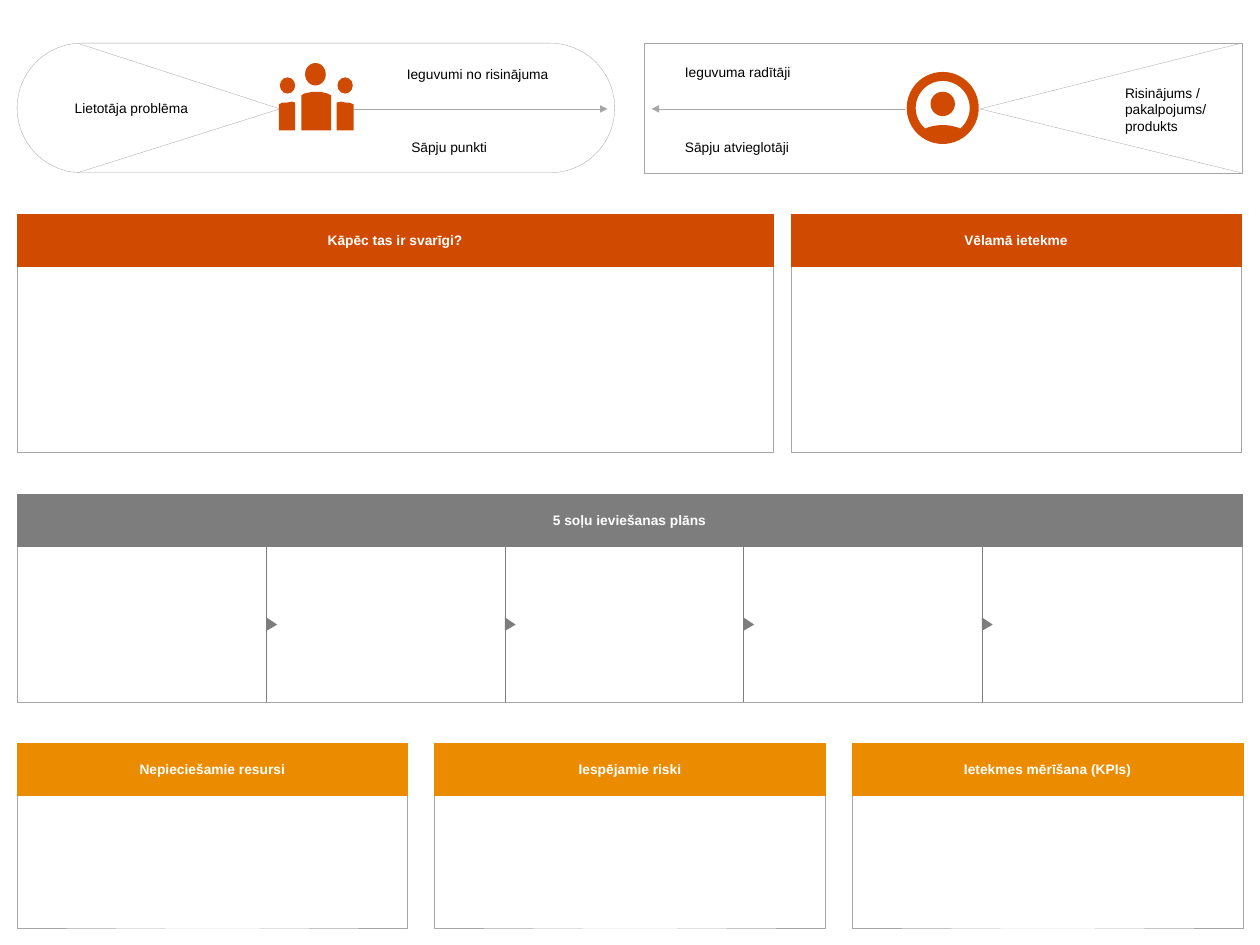
import dataclasses
import math
import typing

import pptx
import pptx.dml.color
import pptx.enum.shapes
import pptx.enum.text
import pptx.oxml
import pptx.oxml.ns
import pptx.util

Inches = pptx.util.Inches
RGB = pptx.dml.color.RGBColor
SHAPES = pptx.enum.shapes.MSO_SHAPE
Point = tuple[float, float]


@dataclasses.dataclass(frozen=True)
class Theme:
    orange: RGB = RGB.from_string("D04A02")
    amber: RGB = RGB.from_string("EB8C00")
    gray: RGB = RGB.from_string("7D7D7D")
    outline: RGB = RGB.from_string("A6A6A6")
    black: RGB = RGB.from_string("000000")
    white: RGB = RGB.from_string("FFFFFF")
    font: str = "Arial"
    text_size: float = 11
    line_width: float = 0.25


class Box(typing.NamedTuple):
    left: float
    top: float
    width: float
    height: float


class Panel(typing.NamedTuple):
    title: str
    color: RGB
    header: Box
    bottom: float


class Label(typing.NamedTuple):
    text: str
    box: Box


THEME = Theme()
LEFT = 0.19
HEADER_HEIGHT = 0.58
CANVAS_TOP, CANVAS_HEIGHT, CANVAS_MIDDLE = 0.48, 1.44, 1.21
CANVAS_BOTTOM = CANVAS_TOP + CANVAS_HEIGHT
RESOURCE_PITCH = 4.64
PLAN_TOP, PLAN_BOTTOM = 5.49, 7.8
STEP_LEFT, STEP_PITCH, STEP_MIDDLE = 2.96, 2.65, 6.94

RESOURCE_TITLES = ["Nepieciešamie resursi", "Iespējamie riski", "Ietekmes mērīšana (KPIs)"]
PANELS = [
    Panel("Kāpēc tas ir svarīgi?", THEME.orange, Box(LEFT, 2.38, 8.4, HEADER_HEIGHT), 5.03),
    Panel("Vēlamā ietekme", THEME.orange, Box(8.79, 2.38, 5, HEADER_HEIGHT), 5.03),
    Panel("5 soļu ieviešanas plāns", THEME.gray,
          Box(LEFT, PLAN_TOP, 13.61, HEADER_HEIGHT), PLAN_BOTTOM),
] + [
    Panel(title, THEME.amber,
          Box(LEFT + column * RESOURCE_PITCH, 8.26, 4.34, HEADER_HEIGHT), 10.31)
    for column, title in enumerate(RESOURCE_TITLES)
]
LABELS = [
    Label("Lietotāja problēma", Box(0.83, 1.11, 1.64, 0.19)),
    Label("Ieguvumi no risinājuma", Box(4.52, 0.73, 1.64, 0.19)),
    Label("Sāpju punkti", Box(4.57, 1.54, 1.54, 0.21)),
    Label("Ieguvuma radītāji", Box(7.61, 0.71, 2.08, 0.21)),
    Label("Sāpju atvieglotāji", Box(7.61, 1.54, 2.08, 0.21)),
    Label("Risinājums / pakalpojums/\vprodukts", Box(12.5, 0.94, 1.22, 0.56)),
]
HEADS = [Box(3.39, 0.7, 0.23, 0.25), Box(3.11, 0.86, 0.17, 0.18), Box(3.75, 0.86, 0.17, 0.18)]
BODIES: list[list[Point]] = [
    [(3.1, 1.45), (3.1, 1.16), (3.14, 1.14), (3.19, 1.14), (3.24, 1.13), (3.28, 1.14),
     (3.28, 1.45)],
    [(3.35, 1.45), (3.35, 1.06), (3.38, 1.04), (3.43, 1.03), (3.47, 1.02), (3.56, 1.02),
     (3.6, 1.03), (3.64, 1.04), (3.68, 1.06), (3.68, 1.45)],
    [(3.74, 1.45), (3.74, 1.14), (3.79, 1.13), (3.84, 1.14), (3.88, 1.14), (3.93, 1.16),
     (3.93, 1.45)],
]


def add_box(slide, box: Box, preset=SHAPES.RECTANGLE, fill: RGB | None = None,
            line: RGB | None = None):
    shape = slide.shapes.add_shape(preset, *map(Inches, box))
    paint(shape, fill, line)
    return shape


def paint(shape, fill: RGB | None, line: RGB | None) -> None:
    shape.shadow.inherit = False
    if fill is None:
        shape.fill.background()
    else:
        shape.fill.solid()
        shape.fill.fore_color.rgb = fill
    if line is None:
        shape.line.fill.background()
    else:
        shape.line.color.rgb = line
        shape.line.width = pptx.util.Pt(THEME.line_width)


def add_line(slide, start: Point, end: Point, color: RGB = THEME.outline,
             arrow: bool = False) -> None:
    connector = slide.shapes.add_connector(
        pptx.enum.shapes.MSO_CONNECTOR.STRAIGHT, *map(Inches, start + end))
    connector.line.color.rgb = color
    connector.line.width = pptx.util.Pt(THEME.line_width)
    properties = connector.element.spPr
    if arrow:
        outline = properties.find(pptx.oxml.ns.qn("a:ln"))
        tail = pptx.oxml.parse_xml(
            f'<a:tailEnd {pptx.oxml.ns.nsdecls("a")} type="triangle"/>')
        outline.append(tail)
    properties.append(pptx.oxml.parse_xml(f'<a:effectLst {pptx.oxml.ns.nsdecls("a")}/>'))


def add_outline(slide, contours: list[list[Point]], fill: RGB) -> None:
    scaled = [[(Inches(x), Inches(y)) for x, y in contour] for contour in contours]
    builder = slide.shapes.build_freeform(*scaled[0][0], scale=1.0)
    for index, contour in enumerate(scaled):
        if index:
            builder.move_to(*contour[0])
        builder.add_line_segments(contour[1:], close=True)
    paint(builder.convert_to_shape(), fill, None)


def arc(center: Point, radius: float, first: float, last: float, steps: int = 72) -> list[Point]:
    angles = [math.radians(first + (last - first) * step / steps) for step in range(steps + 1)]
    return [(center[0] + radius * math.cos(angle), center[1] + radius * math.sin(angle))
            for angle in angles]


def set_text(frame, text: str, color: RGB, bold: bool = False) -> None:
    frame.word_wrap = True
    frame.text = text
    for run in frame.paragraphs[0].runs:
        run.font.name = THEME.font
        run.font.size = pptx.util.Pt(THEME.text_size)
        run.font.bold = bold
        run.font.color.rgb = color


def add_panel(slide, panel: Panel) -> None:
    left, top, width, height = panel.header
    add_box(slide, Box(left, top + 0.2, width, panel.bottom - top - 0.2), line=THEME.outline)
    frame = add_box(slide, panel.header, fill=panel.color, line=panel.color).text_frame
    frame.margin_left = frame.margin_right = Inches(0.08)
    frame.margin_top = frame.margin_bottom = Inches(0.2)
    frame.vertical_anchor = pptx.enum.text.MSO_ANCHOR.MIDDLE
    set_text(frame, panel.title, THEME.white, bold=True)
    frame.paragraphs[0].alignment = pptx.enum.text.PP_ALIGN.CENTER


def add_label(slide, label: Label) -> None:
    frame = slide.shapes.add_textbox(*map(Inches, label.box)).text_frame
    frame.margin_left = frame.margin_right = frame.margin_top = frame.margin_bottom = 0
    set_text(frame, label.text, THEME.black)


def add_step_divider(slide, x: float) -> None:
    add_line(slide, (x, PLAN_TOP + HEADER_HEIGHT), (x, PLAN_BOTTOM), THEME.gray)
    add_outline(slide, [[(x, STEP_MIDDLE - 0.08), (x, STEP_MIDDLE + 0.07),
                         (x + 0.12, STEP_MIDDLE)]], THEME.gray)


def add_canvas(slide, left: float, preset, fan_x: float, tip_x: float,
               arrow_start: float, arrow_end: float):
    for y in (CANVAS_BOTTOM, CANVAS_TOP):
        add_line(slide, (fan_x, y), (tip_x, CANVAS_MIDDLE))
    area = add_box(slide, Box(left, CANVAS_TOP, 6.64, CANVAS_HEIGHT), preset, line=THEME.outline)
    add_line(slide, (arrow_start, CANVAS_MIDDLE), (arrow_end, CANVAS_MIDDLE), arrow=True)
    return area


def add_people_icon(slide) -> None:
    for head in HEADS:
        add_box(slide, head, SHAPES.OVAL, fill=THEME.orange)
    add_outline(slide, BODIES, THEME.orange)


def add_user_icon(slide) -> None:
    x = 10.475
    ring = arc((x, 1.2), 0.4, 0, 360)
    shoulders = arc((x, 1.91), 0.52, -67.4, -112.6, 24)
    opening = arc((x, 1.2), 0.3, 131, 409) + shoulders
    head = arc((x, 1.155), 0.135, 0, 360)
    add_outline(slide, [ring, opening, head], THEME.orange)


def main() -> None:
    deck = pptx.Presentation()
    deck.slide_width, deck.slide_height = Inches(14), Inches(10.5)
    slide = deck.slides.add_slide(deck.slide_layouts[6])
    for panel in PANELS:
        add_panel(slide, panel)
    for step in range(4):
        add_step_divider(slide, STEP_LEFT + step * STEP_PITCH)
    problem = add_canvas(slide, LEFT, SHAPES.ROUNDED_RECTANGLE, 0.86, 3.11, 3.93, 6.75)
    problem.adjustments[0] = 0.5
    add_canvas(slide, 7.16, SHAPES.RECTANGLE, 13.79, 10.89, 10.06, 7.24)
    for label in LABELS:
        add_label(slide, label)
    add_people_icon(slide)
    add_user_icon(slide)
    deck.save("out.pptx")


if __name__ == "__main__":
    main()
